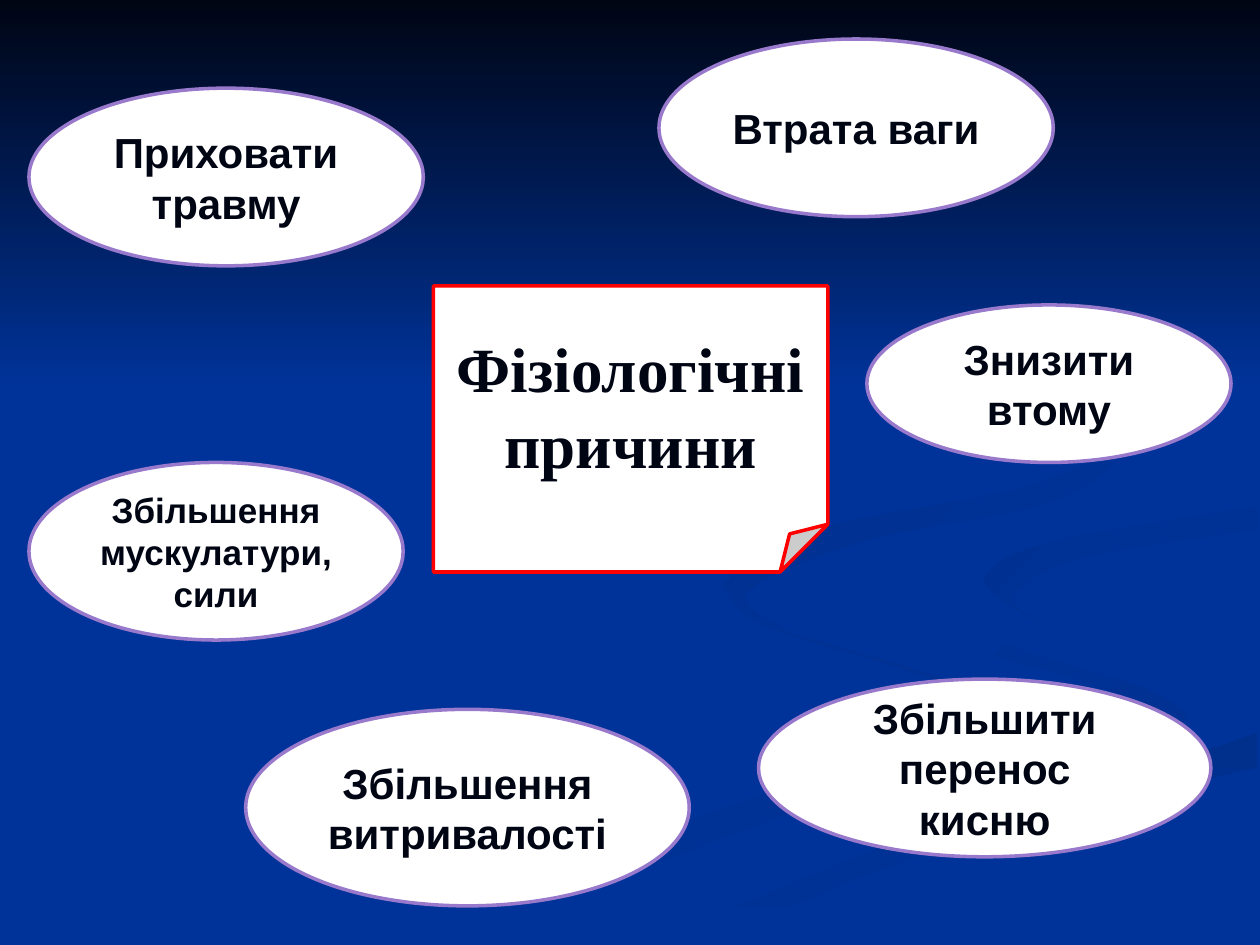
from pptx import Presentation
from pptx.dml.color import RGBColor
from pptx.enum.shapes import MSO_SHAPE
from pptx.enum.text import MSO_ANCHOR, PP_ALIGN
from pptx.util import Inches, Pt

OVAL, NOTE = MSO_SHAPE.OVAL, MSO_SHAPE.FOLDED_CORNER
SKY = MSO_SHAPE.RECTANGLE
CENTER, MIDDLE = PP_ALIGN.CENTER, MSO_ANCHOR.MIDDLE

BLUE = RGBColor(0x00, 0x33, 0x99)
NAVY = RGBColor(0x00, 0x31, 0x93)
DEEP = RGBColor(0x00, 0x2F, 0x8C)
DUSK = RGBColor(0x00, 0x30, 0x91)
SHADE = RGBColor(0x00, 0x2F, 0x8E)
INK = RGBColor(0x00, 0x05, 0x14)
WHITE = RGBColor(0xFF, 0xFF, 0xFF)
LILAC = RGBColor(0x98, 0x79, 0xCB)
RED = RGBColor(0xFF, 0x00, 0x00)

# Ribbons: first colour, last colour, angle, two edges running the same way
RIBBONS = [
    (BLUE, NAVY, 0,
     [(5.75, 4.59), (6.14, 4.96), (7.15, 5.28), (7.81, 5.53), (7.95, 5.92),
      (6.23, 6.47), (3.61, 7.49)],
     [(5.72, 4.64), (6.02, 4.95), (7.14, 5.3), (7.76, 5.53), (7.8, 5.79),
      (5.79, 6.39), (3, 7.49)]),
    (BLUE, NAVY, 45,
     [(7.24, 4.64), (7.74, 5.03), (8.7, 5.3), (9.43, 5.7), (8.94, 6.05)],
     [(7.24, 4.66), (7.66, 5.12), (8.68, 5.44), (9.18, 5.81), (8.94, 6.05)]),
    (DEEP, BLUE, 90,
     [(9.98, 5.81), (7.64, 6.47), (5.99, 7.06), (5.03, 7.49)],
     [(9.98, 6.09), (7.85, 6.61), (6.49, 7.1), (5.71, 7.49)]),
    (BLUE, BLUE, 0,
     [(9.99, 3.87), (7.88, 4.22), (7.25, 4.64), (7.93, 5.09), (9.43, 5.7),
      (7.43, 6.43), (4.77, 7.49)],
     [(9.99, 4.02), (8.35, 4.3), (7.81, 4.63), (8.48, 5.03), (9.99, 5.38),
      (9.99, 5.81), (7.65, 6.47), (5.19, 7.47)]),
    (DUSK, BLUE, 45,
     [(9.98, 4.02), (8.35, 4.3), (7.81, 4.6), (8.26, 4.96)],
     [(9.98, 4.2), (8.59, 4.43), (8.05, 4.72), (8.26, 4.96)]),
    (SHADE, BLUE, 45,
     [(7.62, 2.33), (8.46, 2.79), (8.89, 3.35), (8.3, 3.82), (6.49, 4.2),
      (5.77, 4.62), (6.22, 5)],
     [(7.62, 2.33), (8.54, 2.83), (8.94, 3.44), (8.41, 3.96), (6.83, 4.3),
      (5.93, 4.7), (6.22, 5)]),
]

# Reasons: text, size, box in inches
REASONS = [
    ("Втрата ваги", 24, (5.23, 0.31, 3.13, 1.41)),
    ("Збільшення витривалості", 24, (1.95, 5.63, 3.52, 1.56)),
    ("Збільшення мускулатури, сили", 20, (0.23, 3.67, 2.97, 1.41)),
    ("Збільшити перенос кисню", 24, (6.02, 5.39, 3.59, 1.41)),
    ("Приховати травму", 24, (0.23, 0.7, 3.13, 1.41)),
    ("Знизити втому", 24, (6.88, 2.42, 2.89, 1.25)),
]


def smooth(knots, steps=6):
    """Return points on a soft curve through the knots."""
    ends = [knots[0], *knots, knots[-1]]
    curve = []
    for a, b, c, d in zip(ends, ends[1:], ends[2:], ends[3:]):
        for step in range(steps):
            t = step / steps
            curve.append(tuple(
                q + t * (r - p + t * (2 * p - 5 * q + 4 * r - s
                                      + t * (3 * q - p - 3 * r + s))) / 2
                for p, q, r, s in zip(a, b, c, d)))
    return curve + [knots[-1]]


def paint(shape, first, last, angle):
    """Fill a borderless shape with one colour or a blend of two."""
    shape.shadow.inherit = False
    shape.line.fill.background()
    fill = shape.fill
    if first == last:
        fill.solid()
        fill.fore_color.rgb = first
        return
    fill.gradient()
    fill.gradient_angle = -angle % 360
    for stop, color in zip(fill.gradient_stops, (first, last)):
        stop.color.rgb = color


def add_back(slide, left, top, width):
    """Draw the ribbons and the night sky from the given corner."""
    slide.background.fill.solid()
    slide.background.fill.fore_color.rgb = BLUE
    for first, last, angle, near, far in RIBBONS:
        edge = smooth(near) + smooth(far)[::-1]
        points = [(Inches(x), Inches(y)) for x, y in edge]
        pen = slide.shapes.build_freeform(*points[0])
        pen.add_line_segments(points[1:], close=True)
        shape = pen.convert_to_shape(Inches(left), Inches(top))
        paint(shape, first, last, angle)
    box = (left, top, width, 3.08)
    sky = slide.shapes.add_shape(SKY, *map(Inches, box))
    paint(sky, INK, BLUE, 90)


def add_label(slide, kind, box, text, font, size, edge):
    """Add a white outlined shape with bold centred text."""
    shape = slide.shapes.add_shape(kind, *map(Inches, box))
    shape.shadow.inherit = False
    shape.fill.solid()
    shape.fill.fore_color.rgb = WHITE
    shape.line.color.rgb = edge
    shape.line.width = Pt(2)
    frame = shape.text_frame
    frame.word_wrap = True
    frame.vertical_anchor = MIDDLE
    para = frame.paragraphs[0]
    para.text = text
    para.alignment = CENTER
    para.font.name = font
    para.font.size = Pt(size)
    para.font.bold = True
    para.font.color.rgb = INK


def main():
    deck = Presentation()
    deck.slide_width, deck.slide_height = Inches(10), Inches(7.5)
    slide = deck.slides.add_slide(deck.slide_layouts[6])
    add_back(slide, 0, 0, 10)
    for text, size, box in REASONS:
        add_label(slide, OVAL, box, text, "Arial", size, LILAC)
    # Central topic
    add_label(slide, NOTE, (3.44, 2.27, 3.13, 2.27), "Фізіологічні причини",
              "Times New Roman", 36, RED)
    deck.save("out.pptx")


if __name__ == "__main__":
    main()
